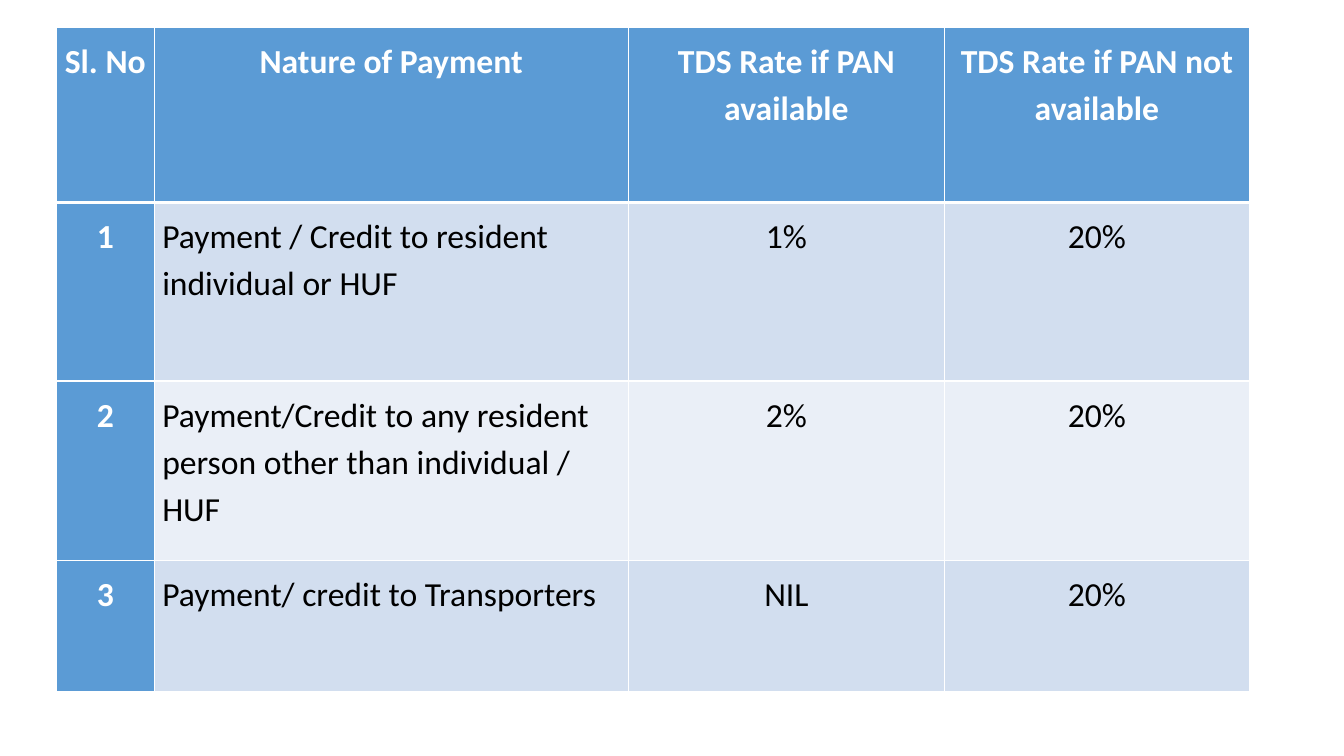
"""Build a slide with a table of TDS rates by nature of payment."""
import pptx
import pptx.dml.color
import pptx.enum.text
import pptx.oxml
import pptx.oxml.ns
import pptx.util

Inches = pptx.util.Inches
Pt = pptx.util.Pt
Color = pptx.dml.color.RGBColor.from_string
Align = pptx.enum.text.PP_ALIGN

THEME = {
    "accent": "5B9BD5",
    "bands": ["D2DEEF", "EAEFF7"],
    "border": "FFFFFF",
    "light_text": "FFFFFF",
    "dark_text": "000000",
    "font": "Calibri",
    "size": 24,
}

ROWS = [
    ["Sl. No", "Nature of Payment", "TDS Rate if PAN available", "TDS Rate if PAN not available"],
    ["1", "Payment / Credit to resident individual or HUF", "1%", "20%"],
    ["2", "Payment/Credit to any resident person other than individual / HUF", "2%", "20%"],
    ["3", "Payment/ credit to Transporters", "NIL", "20%"],
]
COLUMN_WIDTHS = [0.97, 4.7, 3.14, 3.02]
ROW_HEIGHTS = [1.74, 1.77, 1.78, 1.3]


def set_borders(cell, widths):
    properties = cell._tc.get_or_add_tcPr()
    for position, (side, width) in enumerate(widths.items()):
        line = pptx.oxml.parse_xml(
            f'<a:ln{side} {pptx.oxml.ns.nsdecls("a")} w="{Pt(width)}"><a:solidFill>'
            f'<a:srgbClr val="{THEME["border"]}"/></a:solidFill></a:ln{side}>'
        )
        properties.insert(position, line)


deck = pptx.Presentation()
deck.slide_width = Inches(13.33)
deck.slide_height = Inches(7.5)
page = deck.slides.add_slide(deck.slide_layouts[6])

rates = page.shapes.add_table(
    len(ROWS), len(COLUMN_WIDTHS), Inches(0.56), Inches(0.27),
    Inches(sum(COLUMN_WIDTHS)), Inches(sum(ROW_HEIGHTS)),
).table
rates.first_col = True
for column, width in zip(rates.columns, COLUMN_WIDTHS):
    column.width = Inches(width)
for row, height in zip(rates.rows, ROW_HEIGHTS):
    row.height = Inches(height)

for row_index, texts in enumerate(ROWS):
    for column_index, text in enumerate(texts):
        is_heading = row_index == 0 or column_index == 0
        cell = rates.cell(row_index, column_index)
        cell.margin_left = cell.margin_right = Inches(0.08)
        cell.margin_top = cell.margin_bottom = Inches(0.08)
        cell.fill.solid()
        band = THEME["bands"][(row_index - 1) % 2]
        cell.fill.fore_color.rgb = Color(THEME["accent"] if is_heading else band)
        set_borders(cell, {
            "L": 1, "R": 1,
            "T": 3 if row_index == 1 else 1,
            "B": 3 if row_index == 0 else 1,
        })

        cell.text_frame.text = text
        para = cell.text_frame.paragraphs[0]
        is_description = column_index == 1 and not is_heading
        para.alignment = Align.LEFT if is_description else Align.CENTER
        para.line_spacing = 1.15
        para.space_before = Pt(7.5)
        para.space_after = Pt(15)
        span = para.runs[0]
        span.font.name = THEME["font"]
        span.font.size = Pt(THEME["size"])
        span.font.bold = is_heading
        span.font.color.rgb = Color(THEME["light_text"] if is_heading else THEME["dark_text"])

deck.save("out.pptx")
